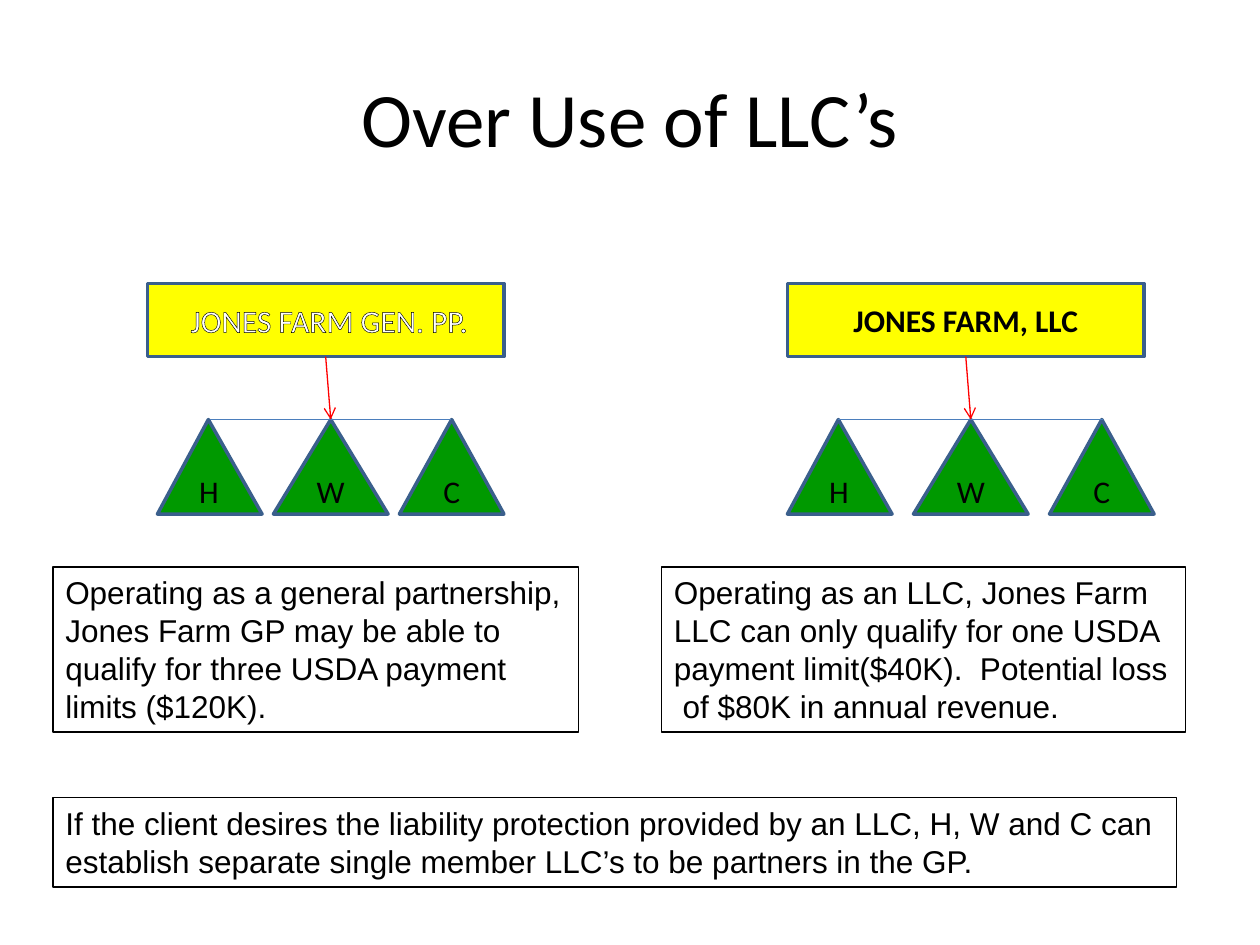
from lxml.etree import SubElement as Sub
from pptx import Presentation
from pptx.dml.color import RGBColor
from pptx.enum.shapes import MSO_CONNECTOR as Link, MSO_SHAPE as Kind
from pptx.enum.text import MSO_ANCHOR as Anchor, MSO_AUTO_SIZE as Fit, PP_ALIGN as Align
from pptx.oxml import parse_xml
from pptx.oxml.ns import nsdecls, qn
from pptx.util import Inches, Pt

BLACK = RGBColor(0x00, 0x00, 0x00)
WHITE = RGBColor(0xFF, 0xFF, 0xFF)
YELLOW = RGBColor(0xFF, 0xFF, 0x00)
GREEN = RGBColor(0x00, 0x99, 0x00)
NAVY = RGBColor(0x3A, 0x5F, 0x8C)
BLUE = RGBColor(0x4B, 0x7E, 0xBC)
RED = RGBColor(0xFF, 0x00, 0x00)


class Board:
    head = "Calibri"
    body = "Arial"
    size = 18

    def __init__(self, deck):
        self.slide = deck.slides.add_slide(deck.slide_layouts[5])
        self.shapes = self.slide.shapes

    def label(self, frame, lines, font, size=size, color=BLACK, bold=False, align=Align.CENTER):
        frame.text = "\n".join(lines)
        for par in frame.paragraphs:
            par.alignment = align
            for run in par.runs:
                run.font.name = font
                run.font.size = Pt(size)
                run.font.bold = bold
                run.font.color.rgb = color

    def title(self, text):
        shape = self.shapes.title
        shape.left, shape.top = Inches(0.5), Inches(0.3)
        shape.width, shape.height = Inches(9), Inches(1.25)
        shape.text_frame.vertical_anchor = Anchor.MIDDLE
        self.label(shape.text_frame, [text], self.head, 44)

    def block(self, kind, x, y, w, h, text, fill, **style):
        shape = self.shapes.add_shape(kind, Inches(x), Inches(y), Inches(w), Inches(h))
        shape.shadow.inherit = False
        shape.fill.solid()
        shape.fill.fore_color.rgb = fill
        shape.line.color.rgb = NAVY
        shape.line.width = Pt(2)
        shape.text_frame.vertical_anchor = Anchor.MIDDLE
        self.label(shape.text_frame, [text], self.head, **style)
        return shape

    def outline(self, shape):
        for run in shape.text_frame.paragraphs[0].runs:
            run.font._element.insert(0, parse_xml(
                f'<a:ln {nsdecls("a")} w="9525"><a:solidFill>'
                f'<a:srgbClr val="{BLACK}"/></a:solidFill></a:ln>'))

    def line(self, x1, y1, x2, y2, color):
        line = self.shapes.add_connector(
            Link.STRAIGHT, Inches(x1), Inches(y1), Inches(x2), Inches(y2))
        line.line.color.rgb = color
        line.line.width = Pt(0.75)
        Sub(line._element.spPr, qn("a:effectLst"))
        return line

    def arrow(self, start, end):
        line = self.line(0, 0, 1, 1, RED)
        line.begin_connect(start, 2)
        line.end_connect(end, 0)
        Sub(line.line._get_or_add_ln(), qn("a:tailEnd"), type="arrow")

    def note(self, x, y, w, h, lines, wrap=False):
        box = self.shapes.add_textbox(Inches(x), Inches(y), Inches(w), Inches(h))
        box.line.color.rgb = BLACK
        box.line.width = Pt(0.75)
        frame = box.text_frame
        frame.word_wrap = wrap
        frame.auto_size = Fit.SHAPE_TO_FIT_TEXT
        self.label(frame, lines, self.body, align=Align.LEFT)

    def farm(self, x, name, peaks, tips, **style):
        firm = self.block(Kind.RECTANGLE, x, 2.25, 2.83, 0.58, name, YELLOW, **style)
        kin = [
            self.block(Kind.ISOSCELES_TRIANGLE, left, 3.33, wide, 0.75, who, GREEN)
            for who, left, wide in zip("HWC", peaks, (0.83, 0.91, 0.83))
        ]
        kin[0].adjustments[0] = 0.487
        for x1, x2 in zip(tips, tips[1:]):
            self.line(x1, 3.33, x2, 3.33, BLUE)
        self.arrow(firm, kin[1])
        return firm


def main():
    deck = Presentation()
    deck.slide_width, deck.slide_height = Inches(10), Inches(7.5)
    board = Board(deck)
    board.title("Over Use of LLC’s")
    firm = board.farm(1.17, " JONES FARM GEN. PP.", (1.25, 2.17, 3.17),
                      (1.67, 2.62, 3.58), color=WHITE)
    board.outline(firm)
    board.note(0.42, 4.5, 4.17, 1.31, [
        "Operating as a general partnership,",
        "Jones Farm GP may be able to",
        "qualify for three USDA payment",
        "limits ($120K).",
    ])
    board.farm(6.25, "JONES FARM, LLC", (6.25, 7.25, 8.33),
               (6.65, 7.7, 8.75), bold=True)
    board.note(5.25, 4.5, 4.16, 1.31, [
        "Operating as an LLC, Jones Farm",
        "LLC can only qualify for one USDA",
        "payment limit($40K).  Potential loss",
        " of $80K in annual revenue.",
    ])
    board.note(0.42, 6.33, 8.92, 0.71, [
        "If the client desires the liability protection provided by an LLC, H, W and C can",
        "establish separate single member LLC’s to be partners in the GP.",
    ], wrap=True)
    deck.save("out.pptx")


if __name__ == "__main__":
    main()
